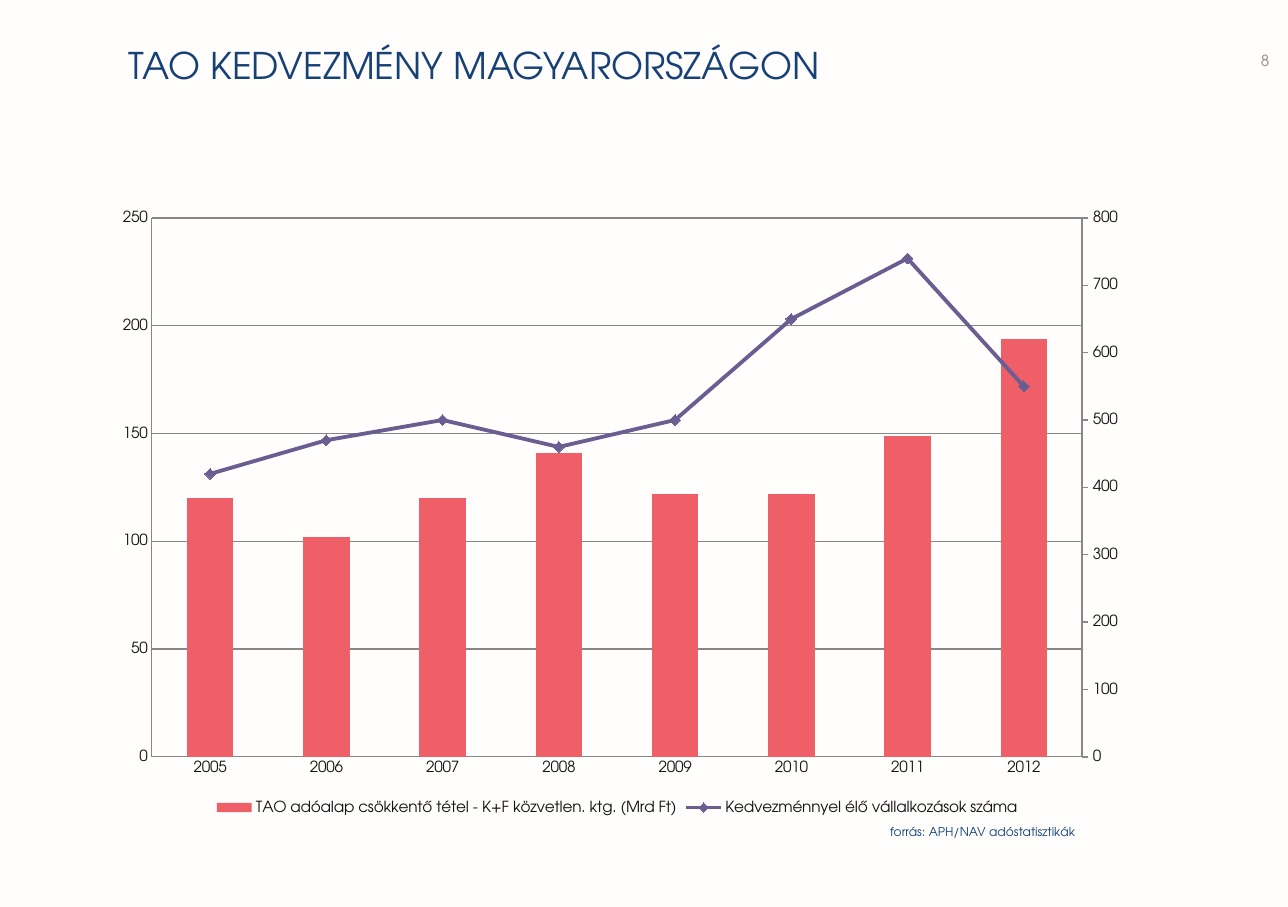
from lxml.etree import SubElement
from pptx import Presentation
from pptx.chart.data import CategoryChartData
from pptx.dml.color import RGBColor
from pptx.enum.chart import XL_CHART_TYPE, XL_LEGEND_POSITION, XL_MARKER_STYLE, XL_TICK_MARK
from pptx.enum.text import MSO_ANCHOR, PP_ALIGN
from pptx.oxml import parse_xml
from pptx.oxml.ns import nsdecls, qn
from pptx.util import Inches, Pt

FONT = "TeX Gyre Adventor"
GRAY = "878787"
YEARS = [str(year) for year in range(2005, 2013)]
TAX_BASE = ("TAO adóalap csökkentő tétel - K+F közvetlen. ktg. (Mrd Ft)",
            [120, 102, 120, 141, 122, 122, 149, 194])
COMPANIES = ("Kedvezménnyel élő vállalkozások száma",
             [420, 470, 500, 460, 500, 650, 740, 550])


def color(value):
    return RGBColor.from_string(value)


def set_font(font, size, tint):
    font.name, font.size, font.bold = FONT, Pt(size), False
    font.color.rgb = color(tint)


def set_line(line, tint, width=0.75):
    line.color.rgb = color(tint)
    line.width = Pt(width)


def place(shape, left, top, width, height):
    shape.left, shape.top = Inches(left), Inches(top)
    shape.width, shape.height = Inches(width), Inches(height)


def write(shape, text, size, tint, align=PP_ALIGN.LEFT, anchor=MSO_ANCHOR.TOP):
    frame = shape.text_frame
    frame.word_wrap = True
    frame.vertical_anchor = anchor
    frame.margin_left = frame.margin_right = Inches(0.11)
    frame.margin_top = frame.margin_bottom = Inches(0.06)
    para = frame.paragraphs[0]
    para.alignment = align
    span = para.add_run()
    span.text = text
    set_font(span.font, size, tint)


def add_label(page, box, text, size, tint, **layout):
    label = page.shapes.add_textbox(*map(Inches, box))
    write(label, text, size, tint, PP_ALIGN.RIGHT, **layout)


def add_title(page, box, text):
    place(page.shapes.title, *box)
    write(page.shapes.title, text, 24, "174176")


def move_to_right_axis(chart, maximum, step):
    """Turn the last column series into a line on a second value axis."""
    area = chart.plots[0]._element.getparent()
    columns = area.find(qn("c:barChart"))
    series = columns.findall(qn("c:ser"))[-1]
    for column_setting in series.findall(qn("c:invertIfNegative")):
        series.remove(column_setting)
    lines = parse_xml(
        f'<c:lineChart {nsdecls("c")}><c:grouping val="standard"/><c:varyColors val="0"/>'
        '<c:marker val="1"/><c:axId val="501"/><c:axId val="502"/></c:lineChart>')
    lines.insert(2, series)
    columns.addnext(lines)
    hidden_axis = parse_xml(
        f'<c:catAx {nsdecls("c")}><c:axId val="501"/>'
        '<c:scaling><c:orientation val="minMax"/></c:scaling><c:delete val="1"/>'
        '<c:axPos val="b"/><c:crossAx val="502"/><c:crosses val="autoZero"/></c:catAx>')
    right_axis = parse_xml(
        f'<c:valAx {nsdecls("c", "a")}><c:axId val="502"/>'
        f'<c:scaling><c:orientation val="minMax"/><c:max val="{maximum}"/><c:min val="0"/>'
        '</c:scaling><c:delete val="0"/><c:axPos val="r"/>'
        '<c:numFmt formatCode="General" sourceLinked="0"/>'
        '<c:majorTickMark val="out"/><c:minorTickMark val="none"/><c:tickLblPos val="nextTo"/>'
        f'<c:spPr><a:ln w="{Pt(1)}"><a:solidFill><a:srgbClr val="{GRAY}"/></a:solidFill></a:ln>'
        '</c:spPr><c:crossAx val="501"/><c:crosses val="max"/>'
        f'<c:crossBetween val="between"/><c:majorUnit val="{step}"/></c:valAx>')
    chart.value_axis._element.addnext(right_axis)
    right_axis.addnext(hidden_axis)


def set_plot_area(chart, left, top, width, height):
    """Fix the inner plot area, in fractions of the chart."""
    area = chart.plots[0]._element.getparent()
    layout = area.find(qn("c:layout"))
    if layout is None:
        layout = parse_xml(f'<c:layout {nsdecls("c")}/>')
        area.insert(0, layout)
    manual = SubElement(layout, qn("c:manualLayout"))
    settings = {"layoutTarget": "inner", "xMode": "edge", "yMode": "edge",
                "x": left, "y": top, "w": width, "h": height}
    for name, value in settings.items():
        SubElement(manual, qn(f"c:{name}")).set("val", str(value))


def format_axes(chart):
    values, years = chart.value_axis, chart.category_axis
    values.minimum_scale, values.maximum_scale, values.major_unit = 0, 250, 50
    values.has_major_gridlines = True
    set_line(values.major_gridlines.format.line, GRAY)
    for axis in (values, years):
        axis.major_tick_mark = axis.minor_tick_mark = XL_TICK_MARK.NONE
        set_line(axis.format.line, GRAY)


def format_series(chart):
    column_plot, line_plot = chart.plots
    column_plot.gap_width = 150
    column_plot.vary_by_categories = False
    fill = column_plot.series[0].format.fill
    fill.solid()
    fill.fore_color.rgb = color("EF5F68")

    companies = line_plot.series[0]
    companies.smooth = False
    set_line(companies.format.line, "695D91", 2.5)
    marker = companies.marker
    marker.style, marker.size = XL_MARKER_STYLE.DIAMOND, 7
    marker.format.fill.solid()
    marker.format.fill.fore_color.rgb = color("695D91")
    set_line(marker.format.line, "695D91")


def add_tax_chart(page, box):
    data = CategoryChartData()
    data.categories = YEARS
    for name, values in (TAX_BASE, COMPANIES):
        data.add_series(name, values)
    chart = page.shapes.add_chart(
        XL_CHART_TYPE.COLUMN_CLUSTERED, *map(Inches, box), data).chart
    chart.has_title = False
    set_font(chart.font, 10, "141313")
    chart.has_legend = True
    chart.legend.position = XL_LEGEND_POSITION.BOTTOM
    chart.legend.include_in_layout = False
    format_axes(chart)
    move_to_right_axis(chart, 800, 100)
    format_series(chart)
    set_plot_area(chart, 0.05, 0.03, 0.9, 0.87)


def main():
    deck = Presentation()
    deck.slide_width, deck.slide_height = Inches(11.69), Inches(8.23)
    page = deck.slides.add_slide(deck.slide_layouts[5])
    page.background.fill.solid()
    page.background.fill.fore_color.rgb = color("FFFEFD")
    add_title(page, (1.06, 0.33, 7.92, 0.91), "TAO KEDVEZMÉNY MAGYARORSZÁGON")
    add_label(page, (10.29, 0.33, 1.34, 0.44), "8", 10, "8A8A8A", anchor=MSO_ANCHOR.MIDDLE)
    add_tax_chart(page, (0.91, 1.81, 9.38, 5.62))
    add_label(page, (5.69, 7.42, 4.18, 0.24), "forrás: APH/NAV adóstatisztikák", 8, "104377")
    deck.save("out.pptx")


if __name__ == "__main__":
    main()
